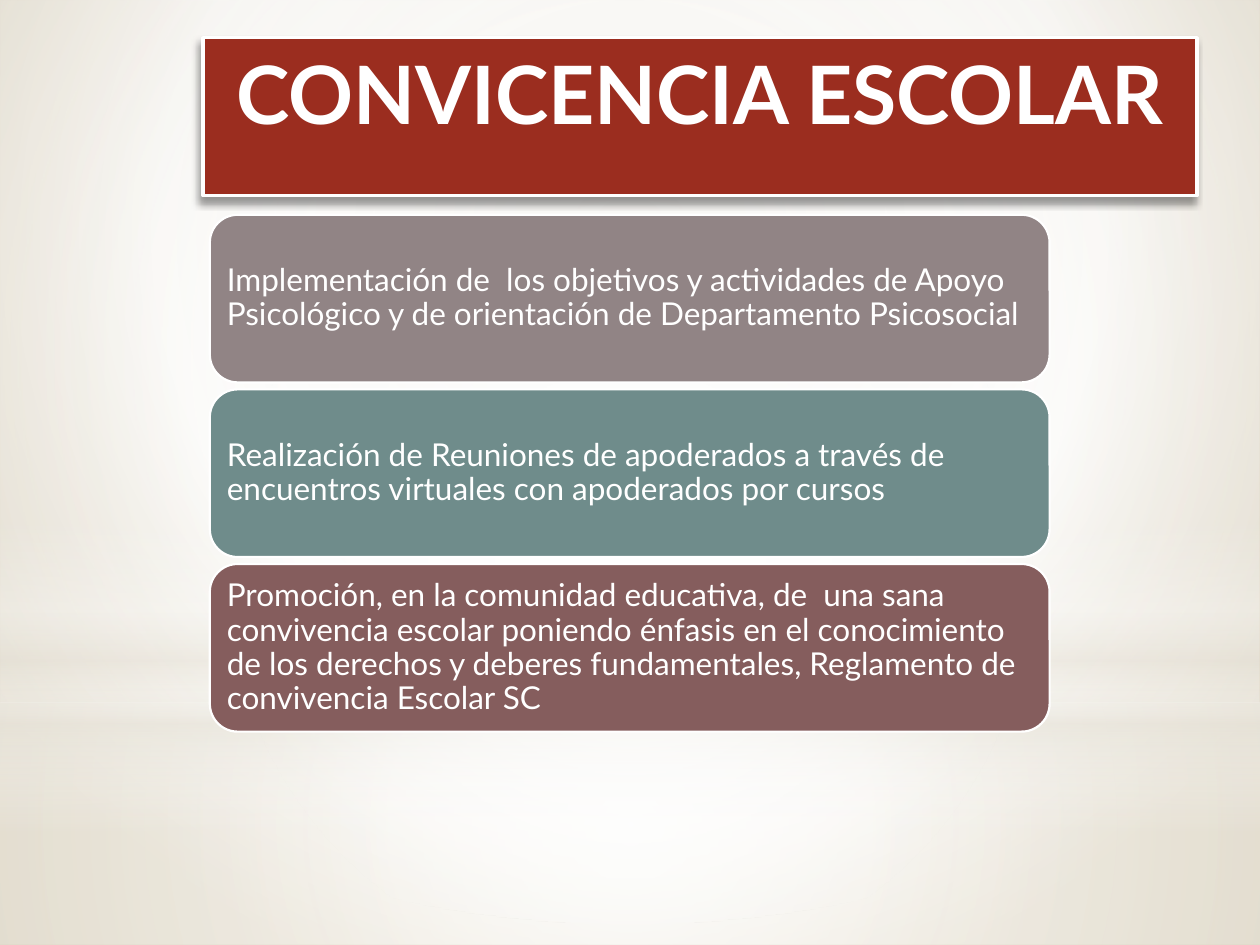
from dataclasses import dataclass
from typing import Optional

import pptx
import pptx.dml.color
import pptx.enum.shapes
import pptx.enum.text
import pptx.oxml
import pptx.oxml.ns
import pptx.util
from pptx.util import Cm

FONT = "Lato"
HEX = {
    "white": "FFFFFF", "cream": "E9E5DC", "sand": "E3DDCF", "tan": "CDBF9F",
    "red": "9B2D1F", "mauve": "918485", "teal": "6F8C8B", "wine": "855D5D",
    "black": "000000",
}
KIND = pptx.enum.shapes.MSO_SHAPE
ALIGN = pptx.enum.text.PP_ALIGN
ANCHOR = pptx.enum.text.MSO_ANCHOR
MID = (50, 50, 50, 50)


@dataclass
class Stop:
    pos: int
    color: str
    alpha: int = 100


@dataclass
class Layer:
    kind: int
    top: float
    height: float
    stops: list[Stop]
    focus: Optional[tuple] = MID  # None gives a vertical linear gradient


@dataclass
class Card:
    color: str
    text: str


LAYERS = [
    Layer(KIND.RECTANGLE, 14.17, 4.88,
          [Stop(0, "white", 91), Stop(37, "white", 76), Stop(100, "cream", 79)]),
    Layer(KIND.RECTANGLE, 0, 14.17,
          [Stop(0, "white", 89), Stop(48, "white", 62), Stop(100, "cream", 79)]),
    Layer(KIND.RECTANGLE, 10.46, 6.35,
          [Stop(0, "white", 0), Stop(29, "white", 30), Stop(45, "cream", 40),
           Stop(55, "white", 26), Stop(65, "cream", 60), Stop(100, "white", 0)], None),
    Layer(KIND.OVAL, 4.45, 14.17, [Stop(0, "white"), Stop(56, "white", 0)]),
]
CARDS = [
    Card("mauve", "Implementación de  los objetivos y actividades de Apoyo "
                  "Psicológico y de orientación de Departamento Psicosocial"),
    Card("teal", "Realización de Reuniones de apoderados a través de "
                 "encuentros virtuales con apoderados por cursos"),
    Card("wine", "Promoción, en la comunidad educativa, de  una sana convivencia "
                 "escolar poniendo énfasis en el conocimiento de los derechos y "
                 "deberes fundamentales, Reglamento de convivencia Escolar SC"),
]


def rgb(name: str) -> pptx.dml.color.RGBColor:
    return pptx.dml.color.RGBColor.from_string(HEX[name])


def node(xml: str):
    """Parse a fragment whose root tag is in the drawing namespace."""
    space = pptx.oxml.ns.nsdecls("a")
    tag, rest = xml.split(" ", 1)
    return pptx.oxml.parse_xml(f"{tag} {space} {rest}")


def blend(fill, root, stops: list[Stop], focus: Optional[tuple]) -> None:
    """Give the first gradient under root its stops and direction."""
    fill.gradient()
    old = next(root.iter(pptx.oxml.ns.qn("a:gradFill")))
    marks = "".join(
        f'<a:gs pos="{s.pos * 1000}"><a:srgbClr val="{HEX[s.color]}">'
        f'<a:alpha val="{s.alpha * 1000}"/></a:srgbClr></a:gs>' for s in stops)
    if focus:
        sides = " ".join(f'{k}="{v * 1000}"' for k, v in zip("ltrb", focus))
        way = f'<a:path path="circle"><a:fillToRect {sides}/></a:path>'
    else:
        way = '<a:lin ang="5400000" scaled="0"/>'
    new = node(f'<a:gradFill rotWithShape="1"><a:gsLst>{marks}</a:gsLst>{way}</a:gradFill>')
    old.getparent().replace(old, new)


def paint(shape, color: str, width: float) -> None:
    shape.fill.solid()
    shape.fill.fore_color.rgb = rgb(color)
    shape.line.color.rgb = rgb("white")
    shape.line.width = pptx.util.Pt(width)


def write(shape, text: str, size: int, align, bold: bool = False):
    para = shape.text_frame.paragraphs[0]
    para.alignment = align
    run = para.add_run()
    run.text = text
    run.font.name = FONT
    run.font.size = pptx.util.Pt(size)
    run.font.bold = bold
    run.font.color.rgb = rgb("white")
    return para


def add_layer(slide, layer: Layer) -> None:
    shape = slide.shapes.add_shape(
        layer.kind, 0, Cm(layer.top), Cm(25.4), Cm(layer.height))
    shape.shadow.inherit = False
    shape.line.fill.background()
    blend(shape.fill, shape.element, layer.stops, layer.focus)


def set_title(slide, text: str) -> None:
    title = slide.shapes.title
    title.left, title.top = Cm(4.09), Cm(0.76)
    title.width, title.height = Cm(20.04), Cm(3.18)
    paint(title, "red", 2)
    frame = title.text_frame
    frame.auto_size = pptx.enum.text.MSO_AUTO_SIZE.NONE
    frame.vertical_anchor = ANCHOR.TOP
    write(title, text, 46, ALIGN.CENTER, True)
    title.element.spPr.append(node(
        '<a:effectLst ><a:outerShdw blurRad="50800" dist="50800" dir="7200000" '
        f'algn="tl" rotWithShape="0"><a:srgbClr val="{HEX["black"]}">'
        '<a:alpha val="40000"/></a:srgbClr></a:outerShdw></a:effectLst>'))
    # Bring the title in front of the backdrop
    slide.shapes.element.append(title.element)


def add_card(slide, card: Card, top: float) -> None:
    shape = slide.shapes.add_shape(
        KIND.ROUNDED_RECTANGLE, Cm(4.23), Cm(top), Cm(16.93), Cm(3.38))
    shape.shadow.inherit = False
    paint(shape, card.color, 1.25)
    frame = shape.text_frame
    frame.word_wrap = True
    frame.vertical_anchor = ANCHOR.MIDDLE
    frame.margin_left = frame.margin_right = Cm(0.18)
    frame.margin_top = frame.margin_bottom = Cm(0.18)
    write(shape, card.text, 18, ALIGN.LEFT).line_spacing = 0.9


def main() -> None:
    deck = pptx.Presentation()
    deck.slide_width, deck.slide_height = Cm(25.4), Cm(19.05)
    slide = deck.slides.add_slide(deck.slide_layouts[5])

    # Backdrop
    blend(slide.background.fill, slide.element,
          [Stop(0, "sand"), Stop(60, "white"), Stop(100, "tan")], (20, 10, 20, 60))
    for layer in LAYERS:
        add_layer(slide, layer)

    # Title and stacked cards
    set_title(slide, "CONVICENCIA ESCOLAR")
    for i, card in enumerate(CARDS):
        add_card(slide, card, 4.33 + 3.52 * i)

    deck.save("out.pptx")


if __name__ == "__main__":
    main()
